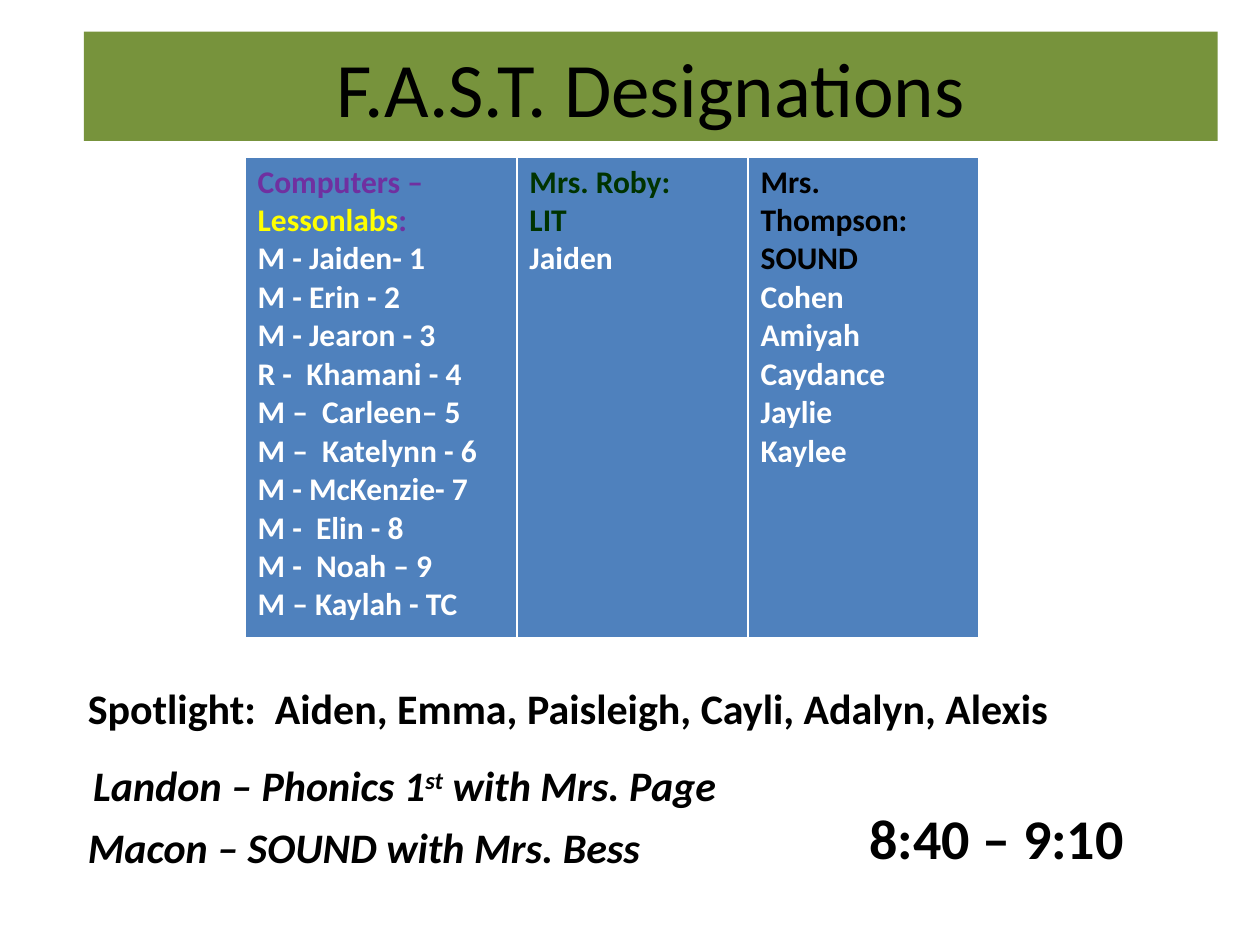
from dataclasses import dataclass

from lxml import etree
from pptx import Presentation
from pptx.dml.color import RGBColor
from pptx.enum import shapes, text
from pptx.oxml import ns
from pptx.util import Cm, Pt

FONT = "Calibri"
BLACK = RGBColor(0x00, 0x00, 0x00)
WHITE = RGBColor(0xFF, 0xFF, 0xFF)
OLIVE = RGBColor(0x77, 0x93, 0x3C)
BLUE = RGBColor(0x4F, 0x81, 0xBD)
PURPLE = RGBColor(0x70, 0x30, 0xA0)
YELLOW = RGBColor(0xFF, 0xFF, 0x00)
DARK_GREEN = RGBColor(0x00, 0x33, 0x00)


@dataclass(frozen=True)
class Group:
    """A table column: heading lines made of (text, colour) runs, then pupils."""
    width: float
    heading: list[list[tuple[str, RGBColor]]]
    pupils: list[str]


@dataclass(frozen=True)
class Note:
    """A text box; its second phrase, if any, is superscript."""
    left: float
    top: float
    width: float
    height: float
    phrases: list[str]
    size: int = 24
    italic: bool = False
    align: text.PP_ALIGN = text.PP_ALIGN.LEFT


GROUPS = [
    Group(5.48,
          [[("Computers –", PURPLE)], [("Lessonlabs", YELLOW), (":", PURPLE)]],
          ["M - Jaiden- 1", "M - Erin - 2", "M - Jearon - 3", "R -  Khamani - 4",
           "M –  Carleen– 5", "M –  Katelynn - 6", "M - McKenzie- 7",
           "M -  Elin - 8", "M -  Noah – 9", "M – Kaylah - TC"]),
    Group(4.66, [[("Mrs. Roby:", DARK_GREEN)], [("LIT", DARK_GREEN)]], ["Jaiden"]),
    Group(4.66, [[("Mrs. Thompson:", BLACK)], [("SOUND", BLACK)]],
          ["Cohen", "Amiyah", "Caydance", "Jaylie", "Kaylee"]),
]

NOTES = [
    Note(16.51, 16.08, 7.42, 1.62, ["8:40 – 9:10 "], size=32,
         align=text.PP_ALIGN.CENTER),
    Note(1.63, 15.19, 23.06, 1.28, ["Landon – Phonics 1", "st", " with Mrs. Page"],
         italic=True),
    Note(1.52, 16.43, 12.27, 1.28, ["Macon – SOUND with Mrs. Bess"], italic=True),
    Note(1.52, 13.64, 21.64, 1.28,
         ["Spotlight:  Aiden, Emma, Paisleigh, Cayli, Adalyn, Alexis"]),
]


def add_text(paragraph, content: str, *, size: int, color: RGBColor = BLACK,
             bold: bool = True, italic: bool = False, superscript: bool = False) -> None:
    run = paragraph.add_run()
    run.text = content
    font = run.font
    font.name, font.size, font.bold, font.italic = FONT, Pt(size), bold, italic
    font.color.rgb = color
    if superscript:
        font._element.set("baseline", "30000")


def add_title(slide) -> None:
    banner = slide.shapes.add_shape(shapes.MSO_SHAPE.RECTANGLE,
                                    Cm(1.69), Cm(0.64), Cm(22.86), Cm(2.2))
    banner.shadow.inherit = False
    banner.fill.solid()
    banner.fill.fore_color.rgb = OLIVE
    banner.line.fill.background()
    banner.text_frame.vertical_anchor = text.MSO_ANCHOR.MIDDLE
    paragraph = banner.text_frame.paragraphs[0]
    paragraph.alignment = text.PP_ALIGN.CENTER
    add_text(paragraph, "F.A.S.T. Designations", size=44, bold=False)


def set_borders(cell) -> None:
    """Draw white cell edges, with a heavier one at the bottom."""
    properties = cell._tc.get_or_add_tcPr()
    for index, (side, width) in enumerate([("L", 1), ("R", 1), ("T", 1), ("B", 3)]):
        line = etree.Element(ns.qn(f"a:ln{side}"), w=str(int(Pt(width))))
        fill = etree.SubElement(line, ns.qn("a:solidFill"))
        etree.SubElement(fill, ns.qn("a:srgbClr"), val=str(WHITE))
        properties.insert(index, line)


def add_group_table(slide, groups: list[Group]) -> None:
    total_width = sum(group.width for group in groups)
    table = slide.shapes.add_table(1, len(groups), Cm(4.94), Cm(3.16),
                                   Cm(total_width), Cm(9.72)).table
    for column, cell, group in zip(table.columns, table.rows[0].cells, groups):
        column.width = Cm(group.width)
        cell.fill.solid()
        cell.fill.fore_color.rgb = BLUE
        set_borders(cell)
        lines = group.heading + [[(pupil, WHITE)] for pupil in group.pupils]
        frame = cell.text_frame
        for index, line in enumerate(lines):
            paragraph = frame.add_paragraph() if index else frame.paragraphs[0]
            for content, color in line:
                add_text(paragraph, content, size=18, color=color)


def add_note(slide, note: Note) -> None:
    box = slide.shapes.add_textbox(Cm(note.left), Cm(note.top),
                                   Cm(note.width), Cm(note.height))
    box.text_frame.word_wrap = True
    paragraph = box.text_frame.paragraphs[0]
    paragraph.alignment = note.align
    for index, phrase in enumerate(note.phrases):
        add_text(paragraph, phrase, size=note.size, italic=note.italic,
                 superscript=index == 1)


def main() -> None:
    presentation = Presentation()
    presentation.slide_width, presentation.slide_height = Cm(25.4), Cm(19.05)
    slide = presentation.slides.add_slide(presentation.slide_layouts[6])
    add_title(slide)
    add_group_table(slide, GROUPS)
    for note in NOTES:
        add_note(slide, note)
    presentation.save("out.pptx")


if __name__ == "__main__":
    main()
